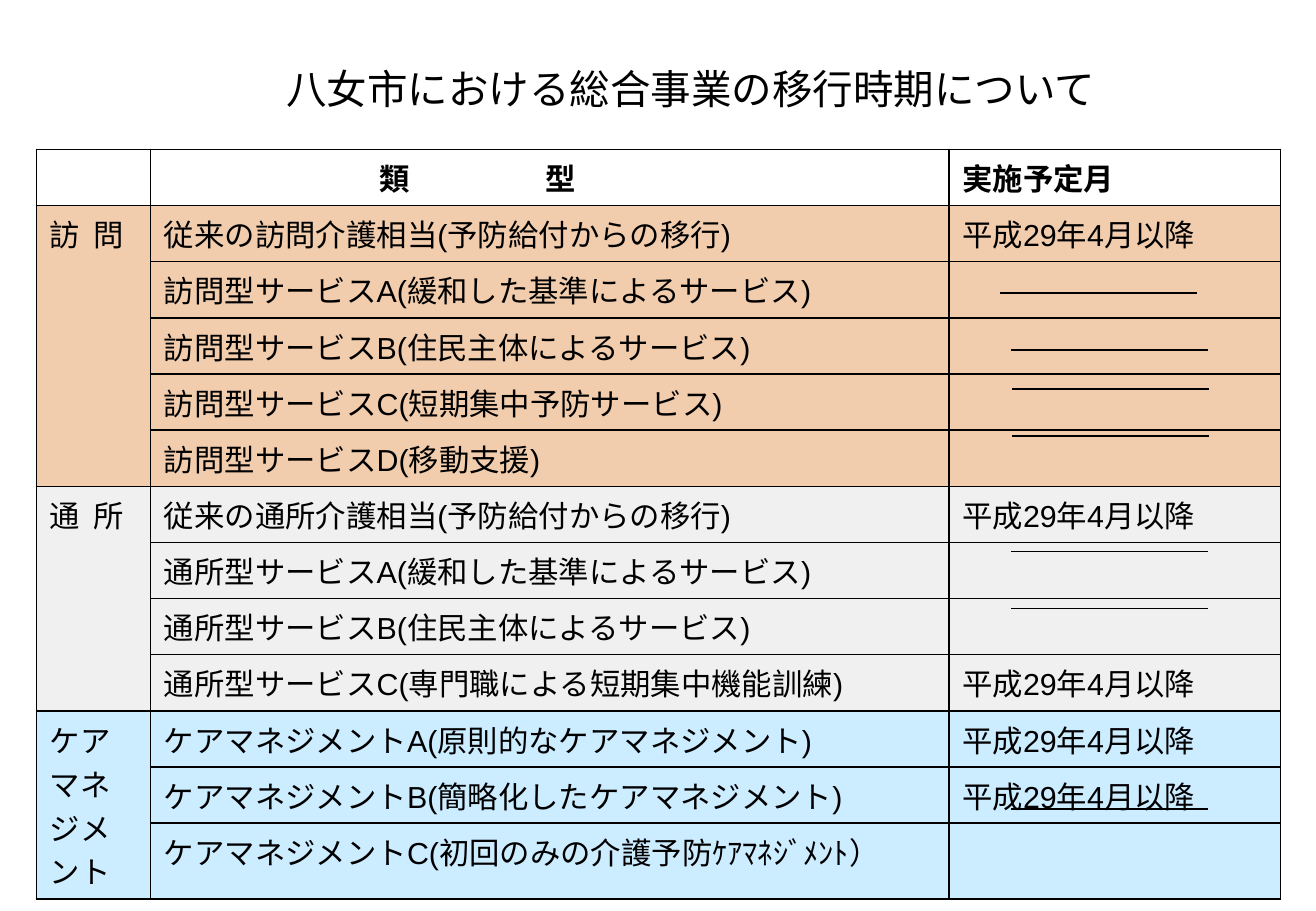
import pptx
import pptx.dml.color
import pptx.enum.shapes
import pptx.enum.text
import pptx.oxml.ns
import pptx.util
from lxml import etree
from pptx.util import Inches

COLORS = {
    "ink": "000000",
    "visit": "F1CCAD",
    "day": "F0F0F0",
    "care": "CCECFF",
}
START = "平成29年4月以降"
HEADER = ["", "\t類\t型", "実施予定月"]
HEADER_TABS = (1.77, 3.14)
GROUP_TABS = (0.36,)
GROUPS = [
    ("訪\t問", "visit", [
        ("従来の訪問介護相当(予防給付からの移行)", START),
        ("訪問型サービスA(緩和した基準によるサービス)", ""),
        ("訪問型サービスB(住民主体によるサービス)", ""),
        ("訪問型サービスC(短期集中予防サービス)", ""),
        ("訪問型サービスD(移動支援)", ""),
    ]),
    ("通\t所", "day", [
        ("従来の通所介護相当(予防給付からの移行)", START),
        ("通所型サービスA(緩和した基準によるサービス)", ""),
        ("通所型サービスB(住民主体によるサービス)", ""),
        ("通所型サービスC(専門職による短期集中機能訓練)", START),
    ]),
    ("ケアマネジメント", "care", [
        ("ケアマネジメントA(原則的なケアマネジメント)", START),
        ("ケアマネジメントB(簡略化したケアマネジメント)", START),
        ("ケアマネジメントC(初回のみの介護予防ｹｱﾏﾈｼﾞﾒﾝﾄ）", ""),
    ]),
]
COLUMN_WIDTHS = (0.94, 6.57, 2.73)
ROW_HEIGHT = 0.44
DASH_LENGTH = 1.62
DASH_STARTS = [(8.23, 2.41), (8.32, 2.88), (8.33, 3.2), (8.33, 3.59),
               (8.32, 4.54), (8.32, 5.01), (8.32, 6.66)]


def rgb(name):
    return pptx.dml.color.RGBColor.from_string(COLORS[name])


def add_child(parent, tag, **attributes):
    return etree.SubElement(parent, pptx.oxml.ns.qn(tag), **attributes)


def set_font(paragraph, face, size, bold=False):
    font = paragraph.font
    font.name = face
    font.size = pptx.util.Pt(size)
    font.bold = bold
    font.color.rgb = rgb("ink")


def set_tabs(paragraph, stops):
    properties = paragraph._p.get_or_add_pPr()
    tab_list = add_child(properties, "a:tabLst")
    for stop in stops:
        add_child(tab_list, "a:tab", pos=str(Inches(stop)), algn="l")


def add_borders(cell):
    properties = cell._tc.get_or_add_tcPr()
    for side in ("a:lnL", "a:lnR", "a:lnT", "a:lnB"):
        border = add_child(properties, side, w=str(pptx.util.Pt(1)))
        solid = add_child(border, "a:solidFill")
        add_child(solid, "a:srgbClr", val=COLORS["ink"])


def fill_cell(cell, text, fill=None, bold=False, tabs=()):
    add_borders(cell)
    if fill:
        cell.fill.solid()
        cell.fill.fore_color.rgb = rgb(fill)
    else:
        cell.fill.background()
    cell.margin_left = cell.margin_right = Inches(0.11)
    cell.margin_top = cell.margin_bottom = Inches(0.05)
    if text:
        cell.text = text
        paragraph = cell.text_frame.paragraphs[0]
        if tabs:
            set_tabs(paragraph, tabs)
        set_font(paragraph, "Arial", 18, bold)


def add_title(slide):
    title = slide.shapes.title
    title.left, title.top = Inches(1.08), Inches(0.3)
    title.width, title.height = Inches(9.21), Inches(0.85)
    frame = title.text_frame
    frame.text = "八女市における総合事業の移行時期について"
    frame.vertical_anchor = pptx.enum.text.MSO_ANCHOR.MIDDLE
    paragraph = frame.paragraphs[0]
    paragraph.alignment = pptx.enum.text.PP_ALIGN.CENTER
    set_font(paragraph, "Noto Sans CJK JP", 24)


def add_schedule(slide):
    row_count = 1 + sum(len(services) for _, _, services in GROUPS)
    schedule = slide.shapes.add_table(
        row_count, len(COLUMN_WIDTHS), Inches(0.3), Inches(1.23),
        Inches(sum(COLUMN_WIDTHS)), Inches(ROW_HEIGHT * row_count)).table
    schedule.first_row = False
    schedule.horz_banding = False
    for column, width in zip(schedule.columns, COLUMN_WIDTHS):
        column.width = Inches(width)
    for row in schedule.rows:
        row.height = Inches(ROW_HEIGHT)

    for index, heading in enumerate(HEADER):
        fill_cell(schedule.cell(0, index), heading, bold=True,
                  tabs=HEADER_TABS if "\t" in heading else ())
    first = 1
    for group, fill, services in GROUPS:
        for offset, (service, month) in enumerate(services):
            label = group if offset == 0 else ""
            for index, text in enumerate((label, service, month)):
                fill_cell(schedule.cell(first + offset, index), text, fill,
                          tabs=GROUP_TABS if "\t" in text else ())
        last = first + len(services) - 1
        schedule.cell(first, 0).merge(schedule.cell(last, 0))
        first = last + 1


def add_dash(slide, left, top):
    """Draw the rule that marks a service without a planned month."""
    dash = slide.shapes.add_connector(
        pptx.enum.shapes.MSO_CONNECTOR.STRAIGHT,
        Inches(left), Inches(top), Inches(left + DASH_LENGTH), Inches(top))
    dash.line.color.rgb = rgb("ink")
    dash.line.width = pptx.util.Pt(1)
    add_child(dash._element.spPr, "a:effectLst")


def main():
    presentation = pptx.Presentation()
    presentation.slide_width = Inches(10.83)
    presentation.slide_height = Inches(7.5)
    slide = presentation.slides.add_slide(presentation.slide_layouts[5])
    add_title(slide)
    add_schedule(slide)
    for left, top in DASH_STARTS:
        add_dash(slide, left, top)
    presentation.save("out.pptx")


if __name__ == "__main__":
    main()
